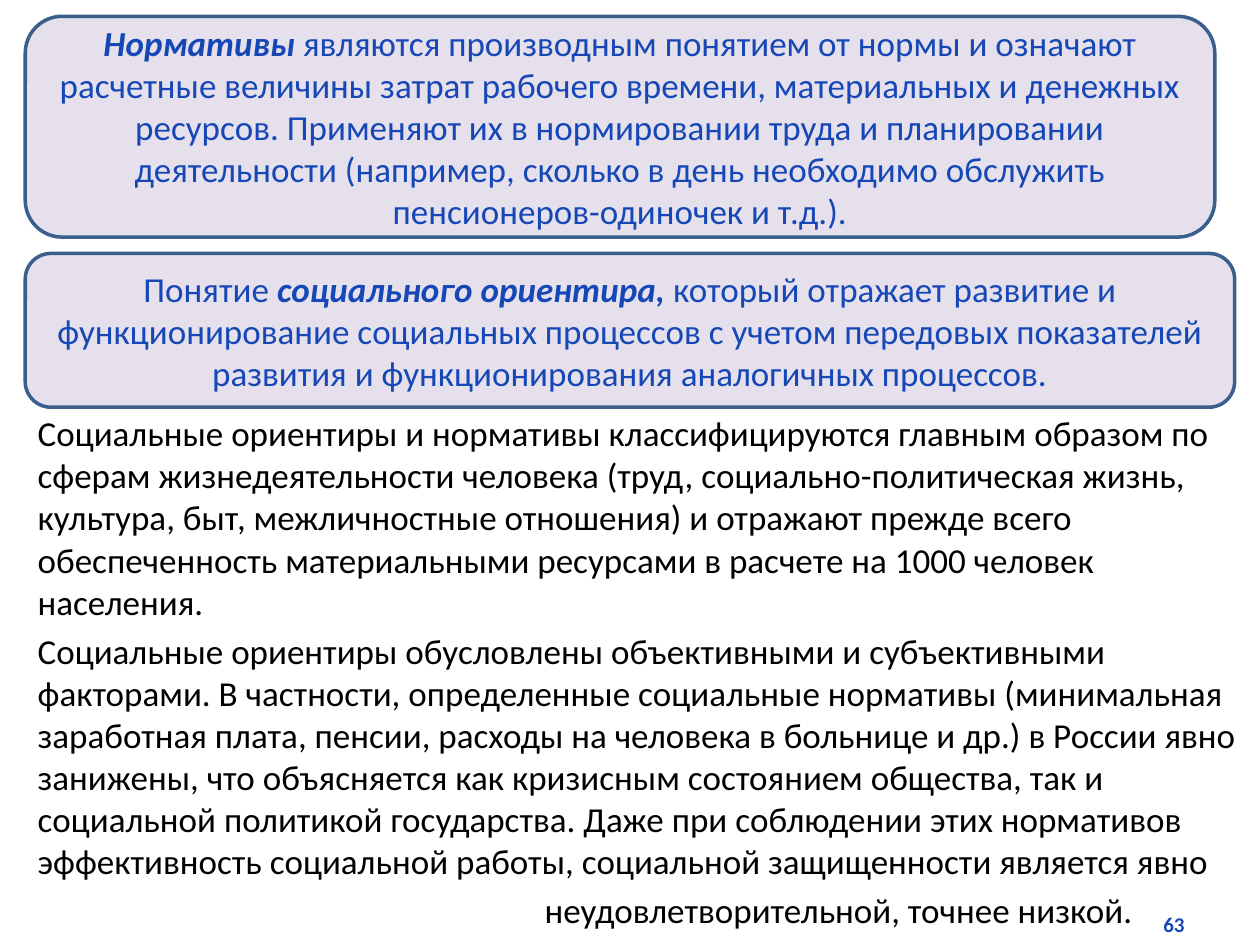
from pptx import Presentation
from pptx.dml.color import RGBColor
from pptx.enum.shapes import MSO_SHAPE
from pptx.enum.text import MSO_ANCHOR, PP_ALIGN
from pptx.util import Cm, Pt

ROUNDED = MSO_SHAPE.ROUNDED_RECTANGLE
MIDDLE, TOP = MSO_ANCHOR.MIDDLE, MSO_ANCHOR.TOP
CENTER, LEFT, RIGHT = PP_ALIGN.CENTER, PP_ALIGN.LEFT, PP_ALIGN.RIGHT
BLANK_LAYOUT = 6
FONT = "Calibri"
COLORS = {"panel": "E6E0EC", "border": "3A5F8C", "accent": "1547B6", "body": "000000"}
EDGE = 0.51

NORMS = [
    ("Нормативы ", True),
    ("являются производным понятием от нормы и означают расчетные величины затрат "
     "рабочего времени, материальных и денежных ресурсов. Применяют их в нормировании "
     "труда и планировании деятельности (например, сколько в день необходимо обслужить "
     "пенсионеров-одиночек и т.д.).", False),
]
GUIDELINE = [
    ("Понятие ", False),
    ("социального ориентира, ", True),
    ("который отражает развитие и функционирование социальных процессов с учетом "
     "передовых показателей развития и функционирования аналогичных процессов.", False),
]
BODY = [
    "Социальные ориентиры и нормативы классифицируются главным образом по сферам "
    "жизнедеятельности человека (труд, социально-политическая жизнь, культура, быт, "
    "межличностные отношения) и отражают прежде всего обеспеченность материальными "
    "ресурсами в расчете на 1000 человек населения.",
    "Социальные ориентиры обусловлены объективными и субъективными факторами. "
    "В частности, определенные социальные нормативы (минимальная заработная плата, "
    "пенсии, расходы на человека в больнице и др.) в России явно занижены, что "
    "объясняется как кризисным состоянием общества, так и социальной политикой "
    "государства. Даже при соблюдении этих нормативов эффективность социальной работы, "
    "социальной защищенности является явно",
]
CONCLUSION = "неудовлетворительной, точнее низкой."


def color(name):
    return RGBColor.from_string(COLORS[name])


def add_span(para, text, size=20, fill="body", bold=False, italic=False):
    span = para.add_run()
    span.text = text
    span.font.name = FONT
    span.font.size = Pt(size)
    span.font.bold = bold
    span.font.italic = italic
    span.font.color.rgb = color(fill)


def add_panel(page, top, width, height, spans):
    box = page.shapes.add_shape(ROUNDED, Cm(EDGE), Cm(top), Cm(width), Cm(height))
    box.shadow.inherit = False
    box.fill.solid()
    box.fill.fore_color.rgb = color("panel")
    box.line.color.rgb = color("border")
    box.line.width = Pt(2)
    box.text_frame.word_wrap = True
    box.text_frame.vertical_anchor = MIDDLE
    para = box.text_frame.paragraphs[0]
    para.alignment = CENTER
    for text, strong in spans:
        add_span(para, text, fill="accent", bold=strong, italic=strong)


def add_text(page, left, top, width, height, texts, align=LEFT, anchor=TOP, **style):
    box = page.shapes.add_textbox(Cm(left), Cm(top), Cm(width), Cm(height))
    frame = box.text_frame
    frame.word_wrap = True
    frame.vertical_anchor = anchor
    for index, text in enumerate(texts):
        para = frame.add_paragraph() if index else frame.paragraphs[0]
        para.alignment = align
        if index:
            para.space_before = Pt(4)
        add_span(para, text, **style)
    return frame


def main():
    deck = Presentation()
    deck.slide_width, deck.slide_height = Cm(25.4), Cm(19.05)
    page = deck.slides.add_slide(deck.slide_layouts[BLANK_LAYOUT])

    body = add_text(page, EDGE, 8.18, 24.89, 7.49, BODY + [CONCLUSION])
    conclusion = body.paragraphs[-1]
    conclusion._p.get_or_add_pPr().set("marL", str(Cm(10.22)))
    add_text(page, 22.71, 18.11, 1.42, 1.02, ["63"], align=RIGHT, anchor=MIDDLE,
             size=12, fill="accent", bold=True)
    add_panel(page, 0.33, 23.98, 4.45, NORMS)
    add_panel(page, 5.11, 24.38, 3.1, GUIDELINE)

    deck.save("out.pptx")


if __name__ == "__main__":
    main()
